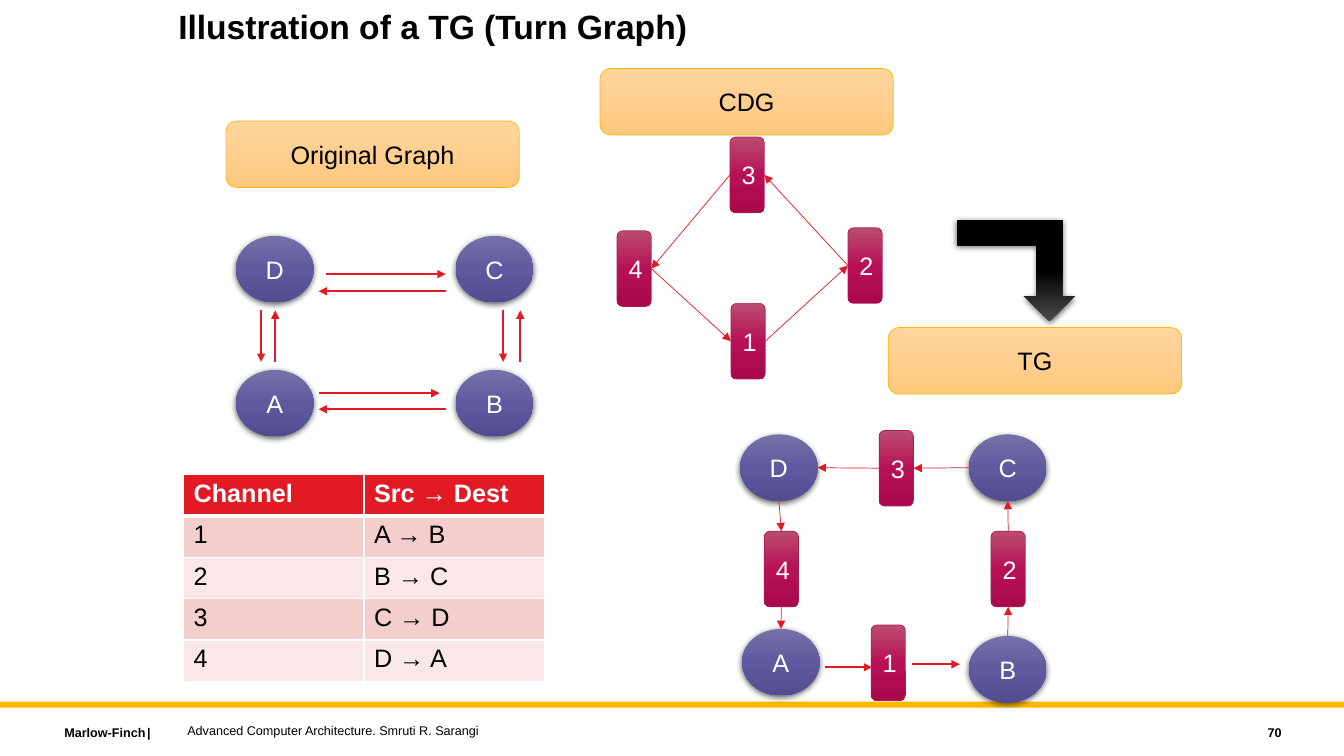
import copy

import pptx
import pptx.dml.color
import pptx.enum.shapes
import pptx.enum.text
import pptx.oxml
import pptx.oxml.ns
import pptx.util

RGBColor = pptx.dml.color.RGBColor
Inches = pptx.util.Inches
Pt = pptx.util.Pt
Kind = pptx.enum.shapes.MSO_SHAPE
Align = pptx.enum.text.PP_ALIGN
Anchor = pptx.enum.text.MSO_ANCHOR
qn = pptx.oxml.ns.qn

FONT = "Arial"
BLACK = RGBColor(0x00, 0x00, 0x00)
WHITE = RGBColor(0xFF, 0xFF, 0xFF)
RED = RGBColor(0xE2, 0x1A, 0x23)
GOLD = RGBColor(0xFF, 0xB6, 0x00)
CRIMSON = RGBColor(0xAF, 0x18, 0x58)
BANDS = [RGBColor(0xFA, 0xE8, 0xE8), RGBColor(0xF4, 0xCD, 0xCD)]
LABEL_FILL = [RGBColor(0xFF, 0xD6, 0x9E), RGBColor(0xFF, 0xCF, 0x90), RGBColor(0xFF, 0xC9, 0x7C)]
NODE_FILL = [RGBColor(0x75, 0x71, 0xA8), RGBColor(0x5F, 0x5A, 0x9F), RGBColor(0x52, 0x4D, 0x90)]
CHANNEL_FILL = [RGBColor(0xBA, 0x4D, 0x6E), RGBColor(0xB7, 0x10, 0x57), RGBColor(0xA9, 0x08, 0x4C)]
ARROW_FILL = [RGBColor(0x4B, 0x4B, 0x4B), BLACK, BLACK]
TOP, LEFT, BOTTOM, RIGHT = range(4)
NAMESPACE = pptx.oxml.ns.nsdecls("a")


class SlideBuilder:
    def __init__(self, slide):
        self.slide = slide

    def style_text(self, paragraph, size, color, bold=False, align=None):
        paragraph.alignment = align
        for run in paragraph.runs:
            run.font.name, run.font.size = FONT, Pt(size)
            run.font.bold, run.font.color.rgb = bold, color

    def text(self, words, left, top, width, height, size=9, bold=False,
             align=Align.LEFT, anchor=Anchor.MIDDLE):
        box = self.slide.shapes.add_textbox(*map(Inches, (left, top, width, height)))
        frame = box.text_frame
        frame.word_wrap, frame.vertical_anchor = True, anchor
        frame.text = words
        self.style_text(frame.paragraphs[0], size, BLACK, bold, align)
        return frame.paragraphs[0]

    def shape(self, kind, left, top, width, height, colors, outline=None,
              words="", text_color=WHITE, shadow=False):
        shape = self.slide.shapes.add_shape(kind, *map(Inches, (left, top, width, height)))
        shape.shadow.inherit = False
        if len(colors) == 1:
            shape.fill.solid()
            shape.fill.fore_color.rgb = colors[0]
        else:
            self.gradient(shape, colors)
        if outline is None:
            shape.line.fill.background()
        else:
            shape.line.color.rgb, shape.line.width = outline, Pt(0.5)
        if shadow:
            effects = shape._element.spPr.find(qn("a:effectLst"))
            effects.append(pptx.oxml.parse_xml(
                f'<a:outerShdw {NAMESPACE} blurRad="57150" dist="19050" dir="5400000" '
                'algn="ctr" rotWithShape="0"><a:srgbClr val="000000">'
                '<a:alpha val="63000"/></a:srgbClr></a:outerShdw>'))
        if words:
            shape.text_frame.text = words
            shape.text_frame.vertical_anchor = Anchor.MIDDLE
            self.style_text(shape.text_frame.paragraphs[0], 18, text_color, align=Align.CENTER)
        return shape

    def gradient(self, shape, colors):
        shape.fill.gradient()
        shape.fill.gradient_angle = 270
        stops = shape._element.spPr.find(qn("a:gradFill")).find(qn("a:gsLst"))
        stops.append(copy.deepcopy(stops[0]))
        for stop, position, color in zip(shape.fill.gradient_stops, (0, 0.5, 1), colors):
            stop.position, stop.color.rgb = position, color

    def label(self, words, left, top):
        self.shape(Kind.ROUNDED_RECTANGLE, left, top, 2.91, 0.66, LABEL_FILL, GOLD, words, BLACK)

    def node(self, words, left, top):
        return self.shape(Kind.OVAL, left, top, 0.77, 0.66, NODE_FILL,
                          words=words, shadow=True)

    def channel(self, words, left, top):
        return self.shape(Kind.ROUNDED_RECTANGLE, left, top, 0.34, 0.75,
                          CHANNEL_FILL, CRIMSON, words)

    def arrow(self, start, end, width=1.5):
        connector = self.slide.shapes.add_connector(
            pptx.enum.shapes.MSO_CONNECTOR.STRAIGHT, *start, *end)
        connector.line.color.rgb, connector.line.width = RED, Pt(width)
        properties = connector._element.spPr
        properties.find(qn("a:ln")).append(
            pptx.oxml.parse_xml(f'<a:tailEnd {NAMESPACE} type="triangle"/>'))
        properties.append(pptx.oxml.parse_xml(f"<a:effectLst {NAMESPACE}/>"))
        return connector

    def side_middle(self, shape, side):
        across = {LEFT: 0, RIGHT: shape.width}.get(side, shape.width // 2)
        down = {TOP: 0, BOTTOM: shape.height}.get(side, shape.height // 2)
        return shape.left + across, shape.top + down

    def link(self, source, source_side, target, target_side):
        connector = self.arrow(self.side_middle(source, source_side),
                               self.side_middle(target, target_side), 0.5)
        # Ovals number their connection sites differently, so only channels are joined
        if source.auto_shape_type == Kind.ROUNDED_RECTANGLE:
            connector.begin_connect(source, source_side)
        if target.auto_shape_type == Kind.ROUNDED_RECTANGLE:
            connector.end_connect(target, target_side)

    def table(self, rows, left, top, column_width, row_height):
        columns = len(rows[0])
        table = self.slide.shapes.add_table(
            len(rows), columns, Inches(left), Inches(top),
            Inches(column_width * columns), Inches(row_height * len(rows))).table
        for row, values in enumerate(rows):
            table.rows[row].height = Inches(row_height)
            for column, words in enumerate(values):
                cell = table.cell(row, column)
                cell.text = words
                header = row == 0
                self.style_text(cell.text_frame.paragraphs[0], 18,
                                WHITE if header else BLACK, header)
                widths = {"L": 1, "R": 1, "T": 3 if row == 1 else 1, "B": 3 if header else 1}
                for side, width in widths.items():
                    cell._tc.get_or_add_tcPr().append(pptx.oxml.parse_xml(
                        f'<a:ln{side} {NAMESPACE} w="{Pt(width)}"><a:solidFill>'
                        f'<a:srgbClr val="{WHITE}"/></a:solidFill></a:ln{side}>'))
                cell.fill.solid()
                cell.fill.fore_color.rgb = RED if header else BANDS[row % 2]


def main():
    presentation = pptx.Presentation()
    presentation.slide_width, presentation.slide_height = Inches(13.33), Inches(7.5)
    builder = SlideBuilder(presentation.slides.add_slide(presentation.slide_layouts[6]))

    # Title and footer
    builder.shape(Kind.RECTANGLE, 0, 6.96, 13.33, 0.06, [GOLD])
    publisher = builder.text("Marlow-Finch\t|", 0.54, 7.14, 2.27, 0.25, bold=True, anchor=Anchor.TOP)
    publisher._p.get_or_add_pPr().append(pptx.oxml.parse_xml(
        f'<a:tabLst {NAMESPACE}><a:tab pos="{Inches(0.82)}" algn="l"/></a:tabLst>'))
    title = builder.text("Illustration of a TG (Turn Graph)", 1.67, 0.05, 7.5, 0.9,
                         size=24, bold=True, anchor=Anchor.TOP)
    title.line_spacing = 0.9
    builder.text("Advanced Computer Architecture. Smruti R. Sarangi", 1.76, 7.12, 8, 0.25)
    builder.text("70", 11.41, 7.14, 1.4, 0.25, bold=True, align=Align.RIGHT)

    # Original graph
    builder.label("Original Graph", 2.24, 1.2)
    for name, left, top in [("A", 2.34, 3.67), ("B", 4.52, 3.67),
                            ("D", 2.34, 2.34), ("C", 4.52, 2.34)]:
        builder.node(name, left, top)
    for start, end, y in [(3.23, 4.42, 2.72), (4.42, 3.16, 2.89),
                          (3.16, 4.36, 3.9), (4.42, 3.16, 4.06)]:
        builder.arrow((Inches(start), Inches(y)), (Inches(end), Inches(y)))
    upper, lower = Inches(3.08), Inches(3.59)
    for down_x, up_x in [(2.59, 2.73), (4.99, 5.16)]:
        builder.arrow((Inches(down_x), upper), (Inches(down_x), lower))
        builder.arrow((Inches(up_x), lower), (Inches(up_x), upper))

    # Channel table
    builder.table([("Channel", "Src → Dest"), ("1", "A → B"), ("2", "B → C"),
                   ("3", "C → D"), ("4", "D → A")], 1.82, 4.71, 1.79, 0.41)

    # Channel dependency graph
    builder.label("CDG", 5.95, 0.68)
    one = builder.channel("1", 7.25, 3.01)
    two = builder.channel("2", 8.41, 2.26)
    three = builder.channel("3", 7.24, 1.36)
    four = builder.channel("4", 6.12, 2.29)
    builder.link(one, RIGHT, two, LEFT)
    builder.link(two, LEFT, three, RIGHT)
    builder.link(three, LEFT, four, RIGHT)
    builder.link(four, RIGHT, one, LEFT)

    # Turn graph
    builder.label("TG", 8.81, 3.25)
    bent_arrow = builder.shape(Kind.BENT_UP_ARROW, 9.49, 2.18, 1.17, 1.01, ARROW_FILL, shadow=True)
    bent_arrow._element.spPr.find(qn("a:xfrm")).set("flipV", "1")
    node_a = builder.node("A", 7.36, 6.24)
    node_b = builder.node("B", 9.61, 6.31)
    node_d = builder.node("D", 7.34, 4.31)
    node_c = builder.node("C", 9.61, 4.31)
    builder.channel("1", 8.64, 6.2)
    two = builder.channel("2", 9.83, 5.27)
    three = builder.channel("3", 8.72, 4.27)
    four = builder.channel("4", 7.58, 5.27)
    for start, end, y in [(8.18, 8.65, 6.62), (9.05, 9.52, 6.59)]:
        builder.arrow((Inches(start), Inches(y)), (Inches(end), Inches(y)))
    builder.link(node_b, TOP, two, BOTTOM)
    builder.link(two, TOP, node_c, BOTTOM)
    builder.link(node_c, LEFT, three, RIGHT)
    builder.link(three, LEFT, node_d, RIGHT)
    builder.link(node_d, BOTTOM, four, TOP)
    builder.link(four, BOTTOM, node_a, TOP)

    presentation.save("out.pptx")


if __name__ == "__main__":
    main()
